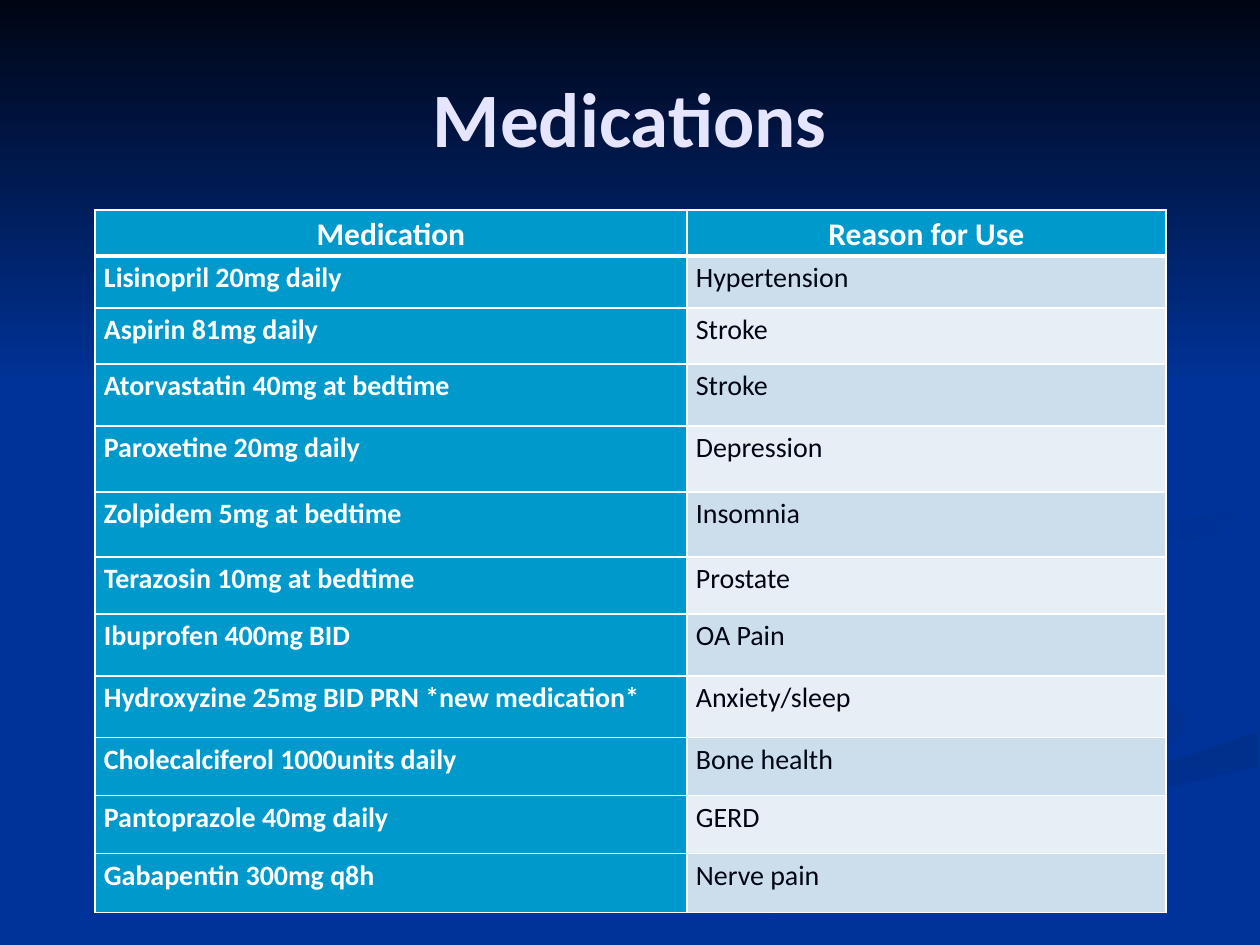
import pptx
import pptx.dml.color
import pptx.enum.shapes
import pptx.enum.text
import pptx.oxml
import pptx.oxml.ns
import pptx.util

TITLE = "Medications"
HEADER = ("Medication", "Reason for Use")
MEDICATIONS = [
    ("Lisinopril 20mg daily", "Hypertension"),
    ("Aspirin 81mg daily", "Stroke"),
    ("Atorvastatin 40mg at bedtime", "Stroke"),
    ("Paroxetine 20mg daily", "Depression"),
    ("Zolpidem 5mg at bedtime", "Insomnia"),
    ("Terazosin 10mg at bedtime", "Prostate"),
    ("Ibuprofen 400mg BID", "OA Pain"),
    ("Hydroxyzine 25mg BID PRN *new medication*", "Anxiety/sleep"),
    ("Cholecalciferol 1000units daily", "Bone health"),
    ("Pantoprazole 40mg daily", "GERD"),
    ("Gabapentin 300mg q8h", "Nerve pain"),
]
COLUMN_WIDTHS = (592, 479)
ROW_HEIGHTS = (46, 52, 56, 62, 66, 65, 57, 62, 62, 58, 58, 59)

THEME = {
    "font": "Calibri", "title_size": 44, "header_size": 18, "body_size": 16,
    "background": "003399", "night": "000514", "title": "E5E5FF",
    "shade": "003193", "deep_shade": "002F8C",
    "accent": "0099CC", "on_accent": "FFFFFF", "body": "000514",
    "bands": ("CCDEEC", "E7EFF6"), "border": "FFFFFF",
    "border_width": 1, "header_rule": 3,
}

# Background ribbons: start colour, end colour, clockwise angle, outline in px
RIBBONS = [
    ("background", "shade", 0, [
        (984, 697), (748, 611), (725, 578), (747, 619), (987, 704), (916, 759),
        (378, 944), (455, 944), (983, 762), (1008, 732)]),
    ("background", "shade", 45, [
        (1188, 718), (1158, 689), (939, 617), (912, 585), (940, 624), (1124, 697),
        (1157, 732), (1126, 762), (1174, 742)]),
    ("deep_shade", "background", 90, [
        (634, 944), (719, 944), (910, 859), (1085, 806), (1257, 767), (1257, 732),
        (1179, 759), (963, 815), (794, 873)]),
    ("shade", "background", 45, [
        (984, 580), (1041, 625), (1016, 587), (1106, 553), (1257, 529), (1257, 507),
        (1070, 538)]),
    ("deep_shade", "background", 45, [
        (861, 542), (1077, 493), (1126, 433), (1089, 367), (960, 294), (1097, 377),
        (1104, 454), (775, 541), (728, 575), (784, 630), (764, 570)]),
]

EMU_PER_PX = 914400 / 126


def px(length):
    return pptx.util.Emu(round(length * EMU_PER_PX))


def rgb(colour):
    return pptx.dml.color.RGBColor.from_string(colour)


def style_text(paragraph, size, colour, bold, centred):
    if centred:
        paragraph.alignment = pptx.enum.text.PP_ALIGN.CENTER
    for run in paragraph.runs:
        run.font.name = THEME["font"]
        run.font.size = pptx.util.Pt(size)
        run.font.bold = bold
        run.font.color.rgb = rgb(colour)


def shade(shape, start, end, angle):
    shape.shadow.inherit = False
    shape.line.fill.background()
    shape.fill.gradient()
    shape.fill.gradient_angle = -angle % 360
    for stop, colour in zip(shape.fill.gradient_stops, (start, end)):
        stop.color.rgb = rgb(THEME[colour])


def add_ribbon(slide, start, end, angle, outline):
    builder = slide.shapes.build_freeform(*outline[0], scale=EMU_PER_PX)
    builder.add_line_segments(outline[1:], close=True)
    shade(builder.convert_to_shape(), start, end, angle)


def set_borders(cell, widths):
    properties = cell._tc.get_or_add_tcPr()
    for position, (side, width) in enumerate(widths.items()):
        properties.insert(position, pptx.oxml.parse_xml(
            f'<a:ln{side} {pptx.oxml.ns.nsdecls("a")} w="{pptx.util.Pt(width)}">'
            f'<a:solidFill><a:srgbClr val="{THEME["border"]}"/></a:solidFill></a:ln{side}>'))


def fill_cell(cell, text, row, column):
    is_header = row == 0
    on_accent = is_header or column == 0
    cell.text_frame.text = text
    cell.margin_left = cell.margin_right = px(9)
    cell.margin_top = cell.margin_bottom = 0
    paragraph = cell.text_frame.paragraphs[0]
    paragraph.line_spacing = 1.15
    style_text(paragraph, THEME["header_size" if is_header else "body_size"],
               THEME["on_accent" if on_accent else "body"], on_accent, is_header)
    cell.fill.solid()
    cell.fill.fore_color.rgb = rgb(THEME["accent"] if on_accent else THEME["bands"][(row - 1) % 2])
    thin, thick = THEME["border_width"], THEME["header_rule"]
    set_borders(cell, {"L": thin, "R": thin, "T": thick if row == 1 else thin,
                       "B": thick if is_header else thin})


def main():
    deck = pptx.Presentation()
    deck.slide_width, deck.slide_height = px(1260), px(945)
    slide = deck.slides.add_slide(deck.slide_layouts[5])

    # Background
    slide.background.fill.solid()
    slide.background.fill.fore_color.rgb = rgb(THEME["background"])
    for ribbon in RIBBONS:
        add_ribbon(slide, *ribbon)
    night_sky = slide.shapes.add_shape(pptx.enum.shapes.MSO_SHAPE.RECTANGLE,
                                       0, 0, px(1260), px(388))
    shade(night_sky, "night", "background", 90)

    # Title, brought in front of the background
    title = slide.shapes.title
    slide.shapes._spTree.append(title._element)
    title.left, title.top, title.width, title.height = px(63), px(38), px(1134), px(158)
    title.text_frame.text = TITLE
    title.text_frame.vertical_anchor = pptx.enum.text.MSO_ANCHOR.MIDDLE
    style_text(title.text_frame.paragraphs[0], THEME["title_size"], THEME["title"], True, True)

    # Medication table
    rows = [HEADER] + MEDICATIONS
    table = slide.shapes.add_table(len(rows), len(HEADER), px(95), px(210),
                                   px(sum(COLUMN_WIDTHS)), px(sum(ROW_HEIGHTS))).table
    for column, width in zip(table.columns, COLUMN_WIDTHS):
        column.width = px(width)
    for row, (texts, height) in enumerate(zip(rows, ROW_HEIGHTS)):
        table.rows[row].height = px(height)
        for column, text in enumerate(texts):
            fill_cell(table.cell(row, column), text, row, column)

    deck.save("out.pptx")


if __name__ == "__main__":
    main()
